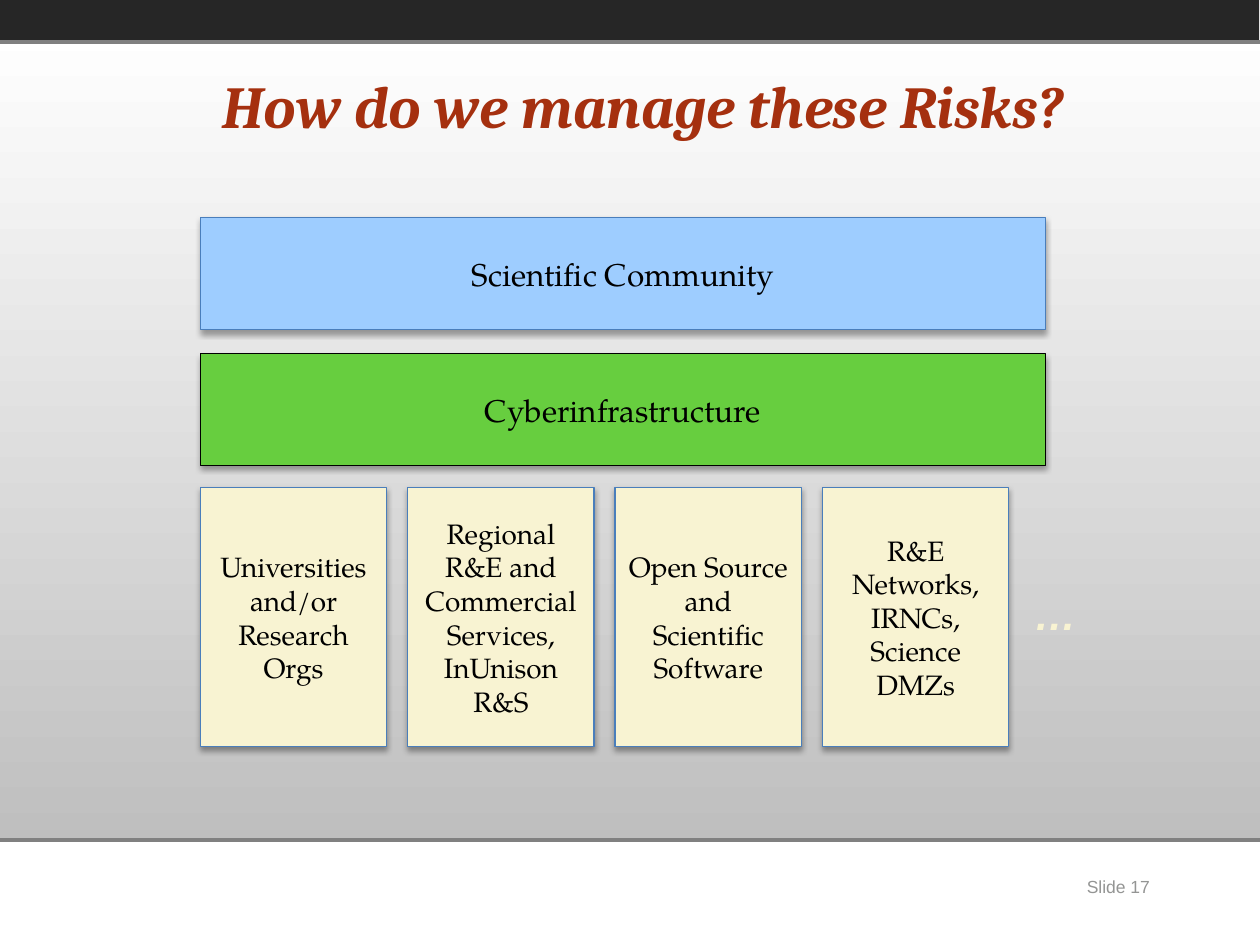
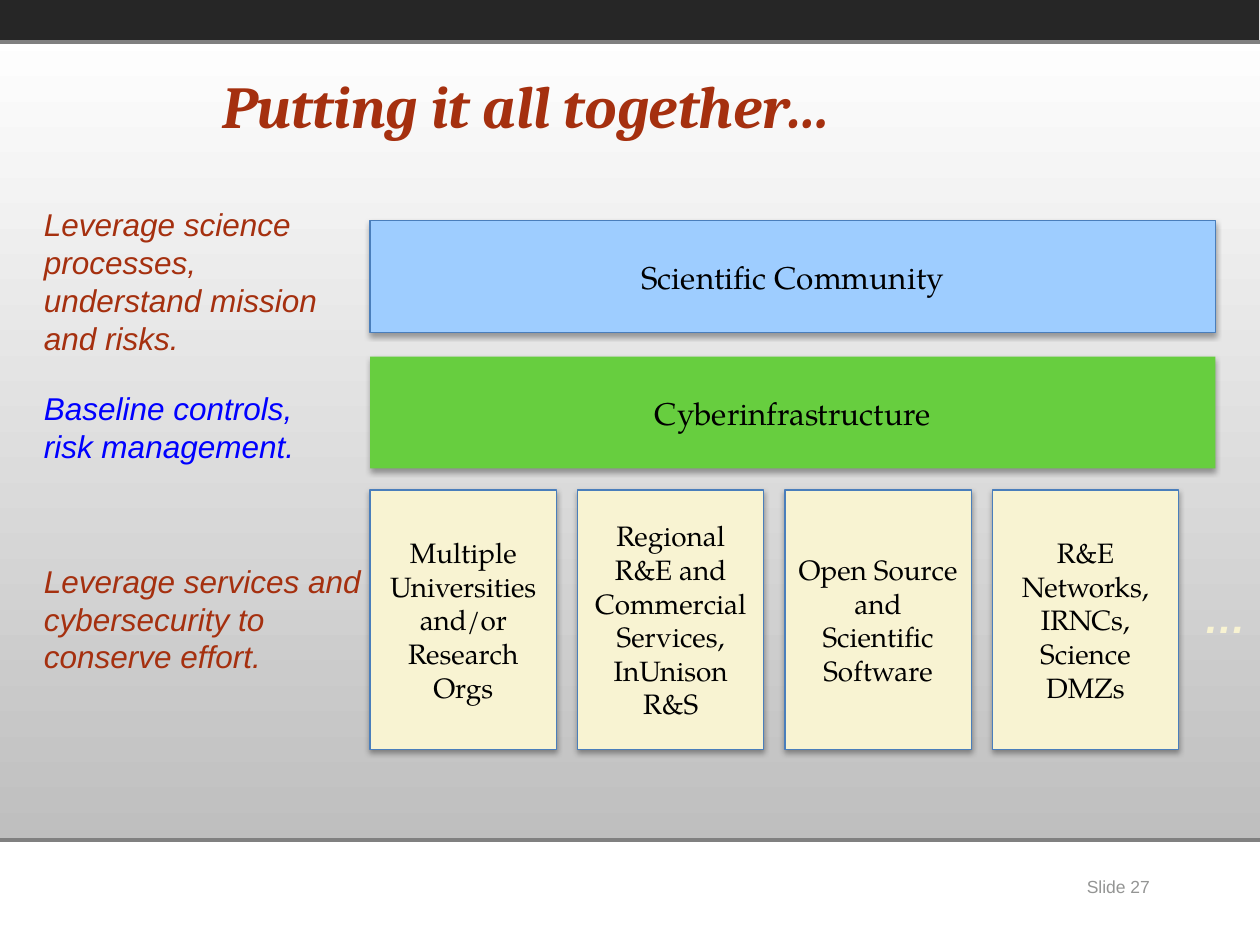
"""Build two slides on managing risk in cyberinfrastructure."""
from dataclasses import dataclass

from lxml import etree
from pptx import Presentation
from pptx.dml.color import RGBColor
from pptx.enum.shapes import MSO_CONNECTOR, MSO_SHAPE
from pptx.enum.text import MSO_ANCHOR, MSO_AUTO_SIZE, PP_ALIGN
from pptx.oxml.ns import qn
from pptx.util import Pt

LEFT, CENTER = PP_ALIGN.LEFT, PP_ALIGN.CENTER
TOP, MIDDLE = MSO_ANCHOR.TOP, MSO_ANCHOR.MIDDLE
RECT, STRAIGHT = MSO_SHAPE.RECTANGLE, MSO_CONNECTOR.STRAIGHT


@dataclass(frozen=True)
class Theme:
    """Colours, fonts and type sizes."""
    red: str = "A5300F"
    blue: str = "0000FF"
    black: str = "000000"
    white: str = "FFFFFF"
    sky: str = "9ECDFF"
    green: str = "67CE3F"
    cream: str = "F8F3D2"
    edge: str = "4A7EBB"
    band: str = "262626"
    rule: str = "808080"
    shade: str = "BFBFBF"
    footer: str = "949594"
    title_font: str = "Cambria"
    box_font: str = "TeX Gyre Pagella"
    note_font: str = "Arial"
    title_size: int = 34
    dots_size: int = 24
    large: int = 18
    card_size: int = 16
    footer_size: int = 10


T = Theme()
WIDTH, HEIGHT = 720, 540
TOP_RULE, BOTTOM_RULE = 24, 480
BAR_W, BAR_H, BAR_PITCH = 483, 64, 77.75
CARD_W, CARD_H, CARD_PITCH, CARDS_DOWN = 106.5, 148.25, 118.5, 154
DOTS_RIGHT, DOTS_DOWN = 469.5, 208.5

SHARED_CARDS = [
    "Regional R&E and Commercial Services,\nInUnison R&S",
    "Open Source and Scientific Software",
    "R&E Networks,\nIRNCs,\nScience DMZs",
]
SLIDES = [
    {
        "title": "How do we manage these Risks?",
        "number": "Slide 17",
        "origin": (114.5, 124.5),
        "green_edge": T.black,
        "first_card": "Universities and/or Research Orgs",
        "notes": [],
    },
    {
        "title": "Putting it all together…",
        "number": "Slide 27",
        "origin": (211.5, 126),
        "green_edge": None,
        "first_card": "Multiple Universities and/or Research Orgs",
        "notes": [
            ("Leverage science processes, understand mission and risks.",
             T.red, 113.75, 180, 94),
            ("Baseline controls, risk management.", T.blue, 219, 180, 51),
            ("Leverage services and cybersecurity to conserve effort.",
             T.red, 317.5, 198, 73),
        ],
    },
]


def rgb(value):
    return RGBColor.from_string(value)


def write(sp, text, font, size, color, align=LEFT, anchor=TOP,
          bold=False, italic=False, wrap=True):
    tf = sp.text_frame
    tf.text = text
    tf.word_wrap = wrap
    tf.auto_size = MSO_AUTO_SIZE.NONE
    tf.vertical_anchor = anchor
    for p in tf.paragraphs:
        p.alignment = align
        for r in p.runs:
            r.font.name, r.font.size = font, Pt(size)
            r.font.bold, r.font.italic = bold, italic
            r.font.color.rgb = rgb(color)


def add_text(s, x, y, w, h, *args, **style):
    write(s.shapes.add_textbox(Pt(x), Pt(y), Pt(w), Pt(h)), *args, **style)


def add_rect(s, x, y, w, h, fill=None):
    sp = s.shapes.add_shape(RECT, Pt(x), Pt(y), Pt(w), Pt(h))
    sp.shadow.inherit = False
    sp.line.fill.background()
    if fill:
        sp.fill.solid()
        sp.fill.fore_color.rgb = rgb(fill)
    return sp


def add_box(s, x, y, w, h, text, fill, edge, size):
    sp = add_rect(s, x, y, w, h, fill)
    if edge:
        sp.line.color.rgb = rgb(edge)
        sp.line.width = Pt(0.5 if edge == T.black else 0.75)
    effects = sp.element.spPr.find(qn("a:effectLst"))
    shadow = etree.SubElement(effects, qn("a:outerShdw"), blurRad="40000",
                              dist="23000", dir="5400000", rotWithShape="0")
    color = etree.SubElement(shadow, qn("a:srgbClr"), val=T.black)
    etree.SubElement(color, qn("a:alpha"), val="35000")
    write(sp, text, T.box_font, size, T.black, CENTER, MIDDLE)


def add_rule(s, y):
    line = s.shapes.add_connector(STRAIGHT, Pt(0), Pt(y), Pt(WIDTH), Pt(y))
    line.line.color.rgb = rgb(T.rule)
    line.line.width = Pt(2.25)
    etree.SubElement(line.element.spPr, qn("a:effectLst"))


def add_frame(s, title, number):
    backdrop = add_rect(s, 0, 14.5, WIDTH, 464.5)
    backdrop.fill.gradient()
    backdrop.fill.gradient_angle = 90
    for stop, color in zip(backdrop.fill.gradient_stops, (T.shade, T.white)):
        stop.color.rgb = rgb(color)
    add_rect(s, -0.5, 0, WIDTH, TOP_RULE, T.band)
    for y in (TOP_RULE, BOTTOM_RULE):
        add_rule(s, y)
    add_text(s, 558, 497, 162, 19.5, number, T.note_font, T.footer_size,
             T.footer, CENTER)
    sp = s.shapes.title
    sp.left, sp.top, sp.width, sp.height = Pt(120), Pt(36), Pt(560), Pt(90)
    write(sp, title, T.title_font, T.title_size, T.red, bold=True, italic=True)
    s.shapes.element.append(sp.element)


def add_stack(s, x, y, green_edge, cards):
    bars = [("Scientific Community", T.sky, T.edge),
            ("Cyberinfrastructure", T.green, green_edge)]
    for i, (text, fill, edge) in enumerate(bars):
        add_box(s, x, y + i * BAR_PITCH, BAR_W, BAR_H, text, fill, edge, T.large)
    for i, text in enumerate(cards):
        add_box(s, x + i * CARD_PITCH, y + CARDS_DOWN, CARD_W, CARD_H,
                text, T.cream, T.edge, T.card_size)
    add_text(s, x + DOTS_RIGHT, y + DOTS_DOWN, 44.5, 36.5, "…", T.note_font,
             T.dots_size, T.cream, bold=True, italic=True, wrap=False)


def main():
    prs = Presentation()
    prs.slide_width, prs.slide_height = Pt(WIDTH), Pt(HEIGHT)
    for page in SLIDES:
        s = prs.slides.add_slide(prs.slide_layouts.get_by_name("Title Only"))
        add_frame(s, page["title"], page["number"])
        add_stack(s, *page["origin"], page["green_edge"],
                  [page["first_card"], *SHARED_CARDS])
        for text, color, y, w, h in page["notes"]:
            add_text(s, 18, y, w, h, text, T.note_font, T.large, color,
                     italic=True)
    prs.save("out.pptx")


if __name__ == "__main__":
    main()
